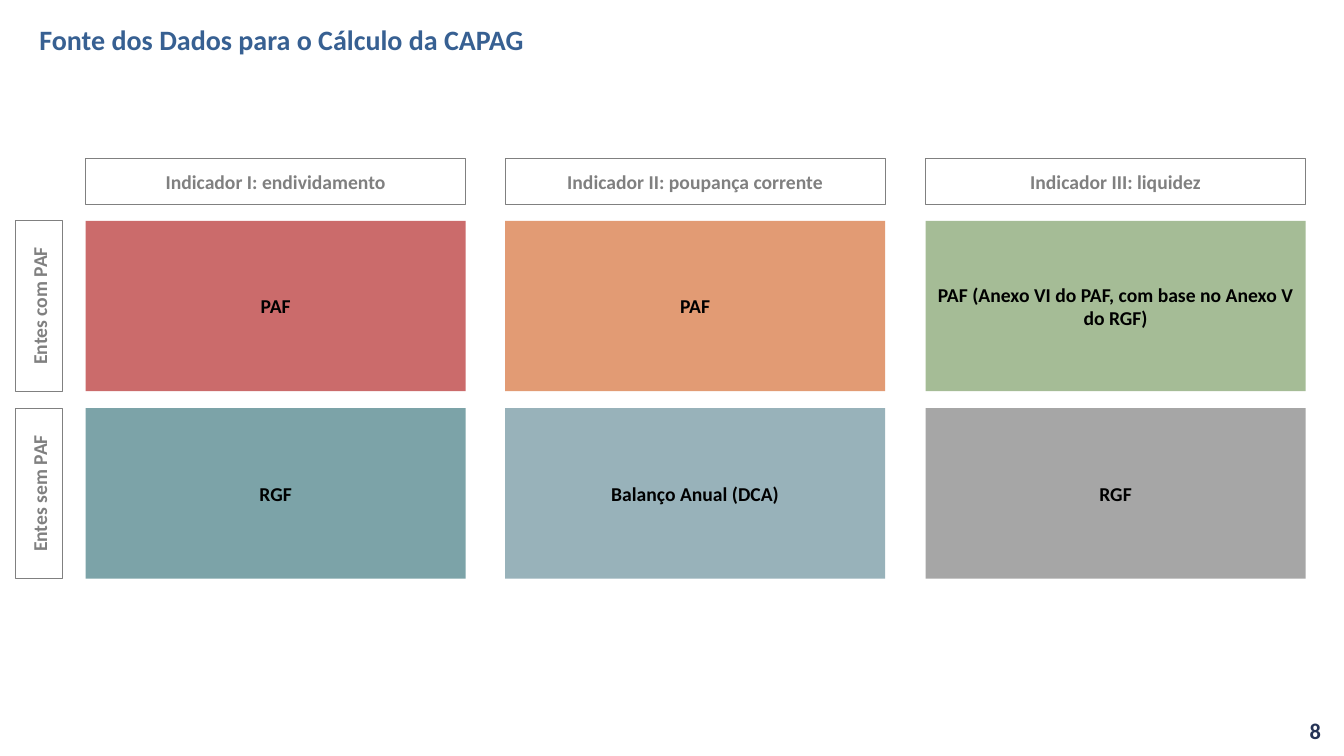
from pptx import Presentation
from pptx.dml.color import RGBColor
from pptx.enum import shapes, text
from pptx.util import Inches, Pt

TITLE_BLUE = RGBColor(0x37, 0x60, 0x92)
NUMBER_NAVY = RGBColor(0x25, 0x33, 0x56)
GRAY = RGBColor(0x80, 0x80, 0x80)
BLACK = RGBColor(0, 0, 0)
WHITE = RGBColor(0xFF, 0xFF, 0xFF)
RED = RGBColor(0xCB, 0x6B, 0x6B)
ORANGE = RGBColor(0xE2, 0x9B, 0x74)
GREEN = RGBColor(0xA5, 0xBC, 0x96)
TEAL = RGBColor(0x7C, 0xA3, 0xA8)
BLUE_GRAY = RGBColor(0x98, 0xB2, 0xBA)
SILVER = RGBColor(0xA6, 0xA6, 0xA6)


def write(shape, words, size=14, color=BLACK, align=text.PP_ALIGN.CENTER, spacing=None):
    frame = shape.text_frame
    frame.word_wrap = True
    frame.vertical_anchor = text.MSO_ANCHOR.MIDDLE
    frame.text = words
    paragraph = frame.paragraphs[0]
    paragraph.alignment = align
    paragraph.line_spacing = spacing
    font = paragraph.runs[0].font
    font.name, font.size, font.bold = "Calibri", Pt(size), True
    font.color.rgb = color


def add_box(left, top, width, height, words, fill=None, heading=False):
    box = slide.shapes.add_shape(shapes.MSO_SHAPE.RECTANGLE, Inches(left), Inches(top),
                                 Inches(width), Inches(height))
    box.shadow.inherit = False
    if fill is None:
        box.fill.background()
    else:
        box.fill.solid()
        box.fill.fore_color.rgb = fill
    if heading:
        box.line.color.rgb = GRAY
        box.line.width = Pt(0.75)
        frame = box.text_frame
        frame.margin_left = frame.margin_right = Inches(0.02)
        frame.margin_top = frame.margin_bottom = Inches(0.01)
    else:
        box.line.fill.background()
    write(box, words, color=GRAY if heading else BLACK)
    return box


presentation = Presentation()
presentation.slide_width = Inches(13.33)
presentation.slide_height = Inches(7.5)
slide = presentation.slides.add_slide(presentation.slide_layouts[5])

# Title
title = slide.shapes.title
title.left, title.top = Inches(0.29), Inches(-0.31)
title.width, title.height = Inches(11.5), Inches(1.45)
write(title, "Fonte dos Dados para o Cálculo da CAPAG", size=20, color=TITLE_BLUE,
      align=text.PP_ALIGN.LEFT, spacing=0.9)

# Grid: one column per indicator, one row per group of entities
column_lefts = [0.85, 5.01, 9.18]
column_width = 3.77
row_tops = [2.19, 4.05]
row_height = 1.69

indicators = ["Indicador I: endividamento", "Indicador II: poupança corrente",
              "Indicador III: liquidez"]
for left, indicator in zip(column_lefts, indicators):
    add_box(left, 1.57, column_width, 0.46, indicator, fill=WHITE, heading=True)

rows = [
    ("Entes com PAF", [("PAF", RED), ("PAF", ORANGE),
                       ("PAF (Anexo VI do PAF, com base no Anexo V do RGF)", GREEN)]),
    ("Entes sem PAF", [("RGF", TEAL), ("Balanço Anual (DCA)", BLUE_GRAY), ("RGF", SILVER)]),
]
label_center = 0.39
label_height = 0.47
for top, (entity, sources) in zip(row_tops, rows):
    # Row label, turned to read upwards
    label = add_box(label_center - row_height / 2, top + (row_height - label_height) / 2,
                    row_height, label_height, entity, heading=True)
    label.rotation = 270
    for left, (source, fill) in zip(column_lefts, sources):
        add_box(left, top, column_width, row_height, source, fill=fill)

# Slide number
number = slide.shapes.add_textbox(Inches(10.2), Inches(7.05), Inches(3), Inches(0.4))
write(number, "8", size=16, color=NUMBER_NAVY, align=text.PP_ALIGN.RIGHT)

presentation.save("out.pptx")
